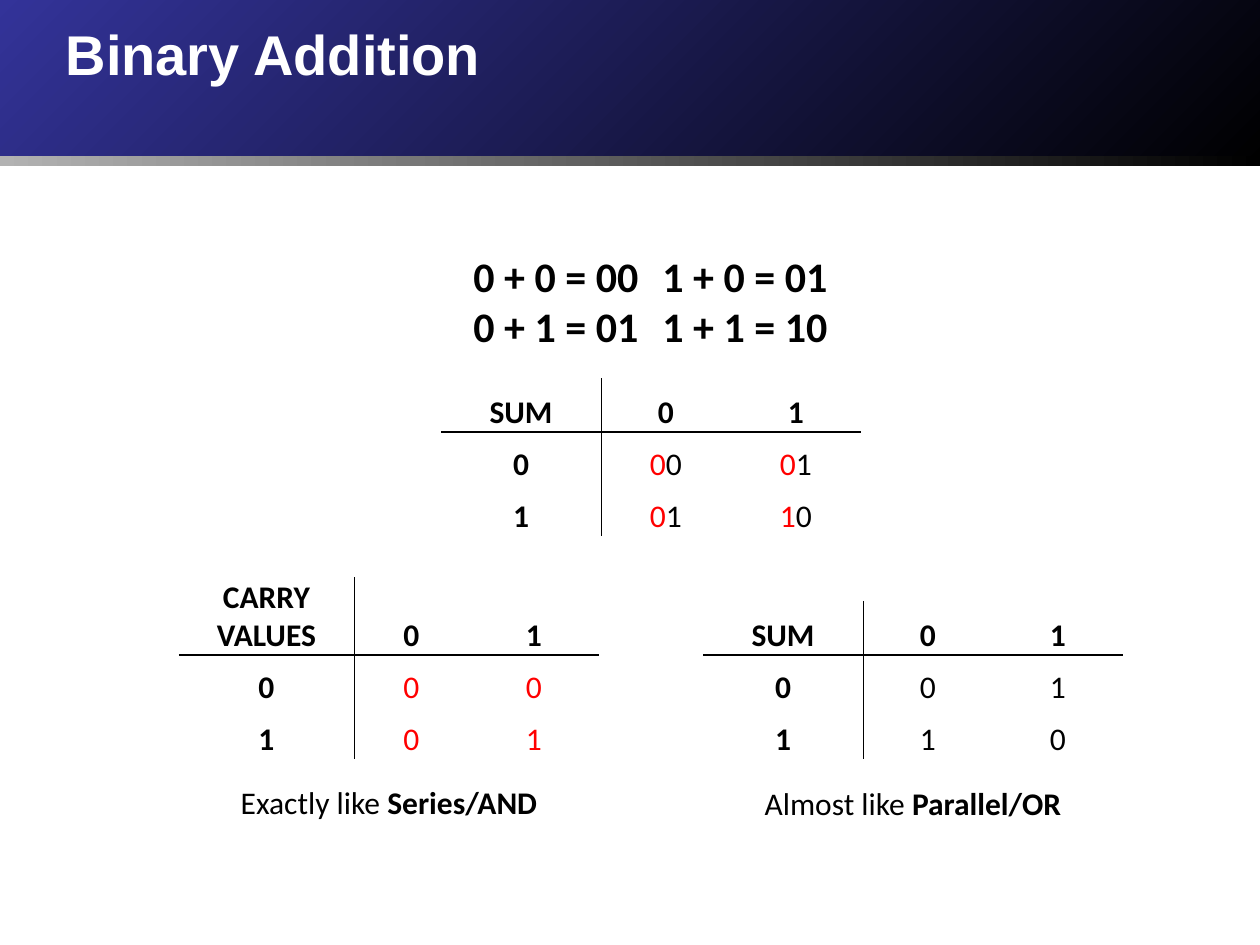
from dataclasses import dataclass
from typing import NamedTuple

from lxml import etree
from pptx import Presentation
from pptx.dml.color import RGBColor
from pptx.enum.shapes import MSO_SHAPE
from pptx.enum.text import MSO_ANCHOR, MSO_AUTO_SIZE, PP_ALIGN
from pptx.oxml.ns import qn
from pptx.util import Pt

RECT = MSO_SHAPE.RECTANGLE
TOP, BOTTOM = MSO_ANCHOR.TOP, MSO_ANCHOR.BOTTOM
LEFT, CENTER = PP_ALIGN.LEFT, PP_ALIGN.CENTER
FIXED = MSO_AUTO_SIZE.NONE
SCALE = 914400 / 126
BLACK, RED, WHITE = "000000", "FF0000", "FFFFFF"


class Run(NamedTuple):
    text: str
    bold: bool = False
    color: str = BLACK


class Box(NamedTuple):
    x: int
    y: int
    w: int
    h: int


class Bar(NamedTuple):
    box: Box
    start: str
    angle: int


@dataclass
class Grid:
    x: int
    y: int
    cols: tuple[int, ...]
    rows: tuple[int, ...]
    head: str
    body: tuple[tuple[str, str], ...]
    reds: int


@dataclass
class Note:
    box: Box
    size: int
    lines: list[list[Run]]


BARS = [
    Bar(Box(0, 0, 1260, 166), "333399", 315),
    Bar(Box(0, 156, 1260, 10), "B2B2B2", 0),
]
COLS, ROWS = (160, 130, 130), (54, 52, 52)
GRIDS = [
    Grid(703, 601, COLS, ROWS, "SUM", (("0", "1"), ("1", "0")), 0),
    Grid(179, 577, (175, 115, 130), (77, 52, 52), "CARRY VALUES",
         (("0", "0"), ("0", "1")), 1),
    Grid(441, 378, COLS, ROWS, "SUM", (("00", "01"), ("01", "10")), 1),
]
NOTES = [
    Note(Box(334, 244, 633, 115), 24, [
        [Run("0 + 0 = 00\t1 + 0 = 01", True)],
        [Run("0 + 1 = 01\t1 + 1 = 10", True)],
    ]),
    Note(Box(179, 777, 420, 50), 18,
         [[Run("Exactly like "), Run("Series/AND", True)]]),
    Note(Box(703, 778, 420, 50), 18,
         [[Run("Almost like "), Run("Parallel/OR", True)]]),
]


def px(n: int) -> int:
    return round(n * SCALE)


def rgb(code: str) -> RGBColor:
    return RGBColor.from_string(code)


def apply(item, form: dict) -> None:
    for key, value in form.items():
        setattr(item, key, value)


def place(box: Box) -> list[int]:
    return [px(n) for n in box]


def write(para, runs: list[Run], size: int, face="Calibri", align=CENTER) -> None:
    para.alignment = align
    for part in runs:
        run = para.add_run()
        run.text = part.text
        apply(run.font, {"name": face, "size": Pt(size), "bold": part.bold})
        run.font.color.rgb = rgb(part.color)


def draw_bar(slide, bar: Bar) -> None:
    shape = slide.shapes.add_shape(RECT, *place(bar.box))
    shape.shadow.inherit = False
    shape.line.fill.background()
    shape.fill.gradient()
    shape.fill.gradient_angle = bar.angle
    for stop, code in zip(shape.fill.gradient_stops, (bar.start, BLACK)):
        stop.color.rgb = rgb(code)


def add_color(parent, code: str):
    return etree.SubElement(parent, qn("a:srgbClr"), val=code)


def draw_title(slide, text: str) -> None:
    title = slide.shapes.title
    slide.shapes._spTree.append(title._element)
    apply(title, dict(zip(("left", "top", "width", "height"),
                          place(Box(53, 13, 1144, 126)))))
    frame = title.text_frame
    apply(frame, {"vertical_anchor": TOP, "word_wrap": True, "auto_size": FIXED})
    para = frame.paragraphs[0]
    write(para, [Run(text, True, WHITE)], 32, "Arial", LEFT)
    props = para.runs[0].font._element
    effect = etree.Element(qn("a:effectLst"))
    props.find(qn("a:solidFill")).addnext(effect)
    shade = etree.SubElement(effect, qn("a:outerShdw"),
                             dist="38100", dir="2700000")
    add_color(shade, BLACK)


def set_edges(cell, row: int, col: int) -> None:
    edges = {"L": (col == 1, 0.5), "R": (col == 0, 0.5),
             "T": (row == 1, 1), "B": (row == 0, 1)}
    props = cell._tc.get_or_add_tcPr()
    for index, (side, (shown, width)) in enumerate(edges.items()):
        line = etree.Element(qn(f"a:ln{side}"), w=str(Pt(width)))
        props.insert(index, line)
        if shown:
            add_color(etree.SubElement(line, qn("a:solidFill")), BLACK)
        else:
            etree.SubElement(line, qn("a:noFill"))


def cell_runs(grid: Grid, row: int, col: int) -> list[Run]:
    if row and col:
        text = grid.body[row - 1][col - 1]
        parts = [Run(text[:grid.reds], color=RED), Run(text[grid.reds:])]
        return [part for part in parts if part.text]
    return [Run(str(row + col - 1) if row or col else grid.head, True)]


def draw_grid(slide, grid: Grid) -> None:
    box = Box(grid.x, grid.y, sum(grid.cols), sum(grid.rows))
    table = slide.shapes.add_table(3, 3, *place(box)).table
    apply(table, {"first_row": False, "horz_banding": False})
    for col, width in zip(table.columns, grid.cols):
        col.width = px(width)
    for row, height in zip(table.rows, grid.rows):
        row.height = px(height)
    form = {"vertical_anchor": BOTTOM, "margin_left": px(1),
            "margin_right": px(1), "margin_top": px(1), "margin_bottom": 0}
    for row in range(3):
        for col in range(3):
            cell = table.cell(row, col)
            apply(cell, form)
            cell.fill.background()
            set_edges(cell, row, col)
            write(cell.text_frame.paragraphs[0], cell_runs(grid, row, col), 18)


def draw_note(slide, note: Note) -> None:
    frame = slide.shapes.add_textbox(*place(note.box)).text_frame
    frame.word_wrap = True
    for index, runs in enumerate(note.lines):
        para = frame.add_paragraph() if index else frame.paragraphs[0]
        write(para, runs, note.size)


def main() -> None:
    deck = Presentation()
    apply(deck, {"slide_width": px(1260), "slide_height": px(945)})
    slide = deck.slides.add_slide(deck.slide_layouts[5])
    for bar in BARS:
        draw_bar(slide, bar)
    draw_title(slide, "Binary Addition")
    for grid in GRIDS:
        draw_grid(slide, grid)
    for note in NOTES:
        draw_note(slide, note)
    deck.save("out.pptx")


if __name__ == "__main__":
    main()
